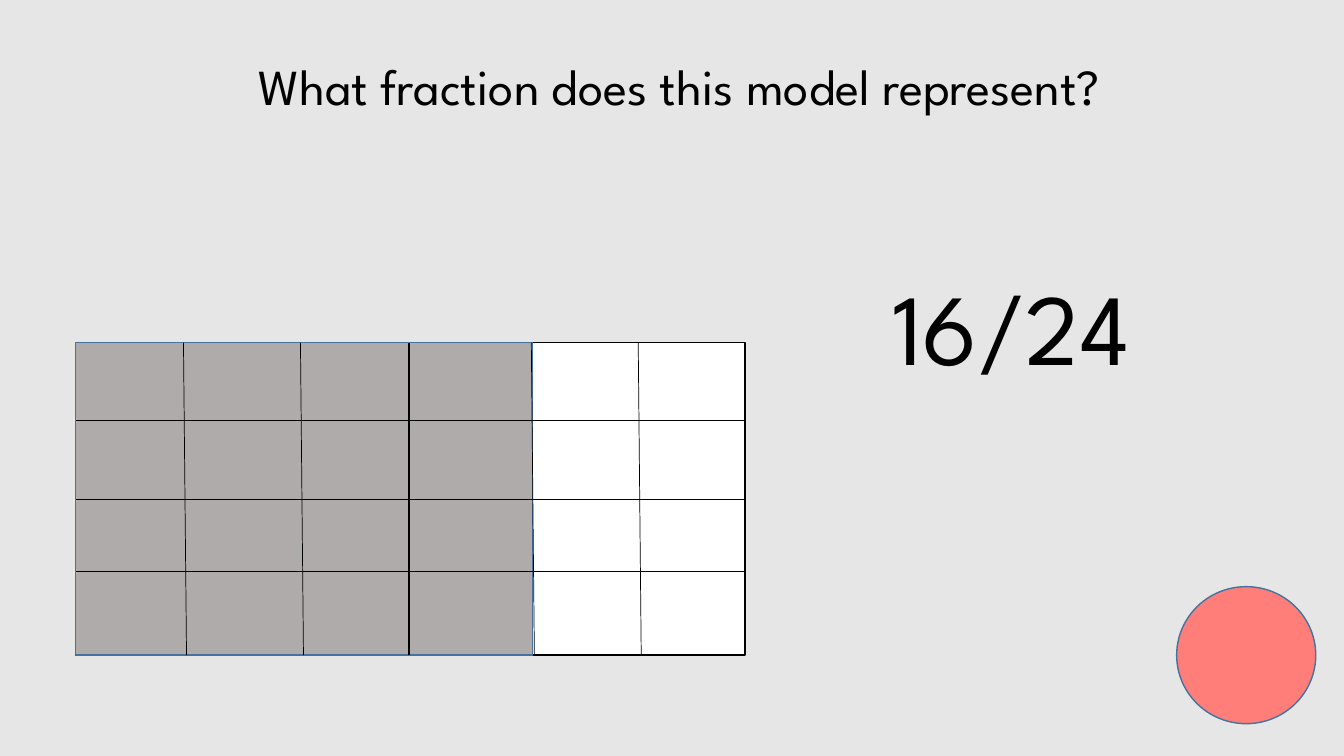
from lxml import etree
from pptx import Presentation
from pptx.dml.color import RGBColor
from pptx.enum.shapes import MSO_CONNECTOR, MSO_SHAPE
from pptx.enum.text import MSO_ANCHOR, MSO_AUTO_SIZE, PP_ALIGN
from pptx.oxml.ns import qn
from pptx.util import Inches, Pt

RECTANGLE, OVAL = MSO_SHAPE.RECTANGLE, MSO_SHAPE.OVAL
STRAIGHT = MSO_CONNECTOR.STRAIGHT
TOP = MSO_ANCHOR.TOP
NO_AUTOFIT = MSO_AUTO_SIZE.NONE
LEFT, CENTER = PP_ALIGN.LEFT, PP_ALIGN.CENTER

BLACK = RGBColor(0x00, 0x00, 0x00)
WHITE = RGBColor(0xFF, 0xFF, 0xFF)
PALE_GRAY = RGBColor(0xE7, 0xE6, 0xE6)
SHADED = RGBColor(0xAF, 0xAB, 0xAB)
CORAL = RGBColor(0xFF, 0x7E, 0x79)
BLUE = RGBColor(0x43, 0x73, 0x9E)


class FractionPage:
    font = "League Spartan"

    def __init__(self, deck):
        self.page = deck.slides.add_slide(deck.slide_layouts[5])
        self.page.background.fill.solid()
        self.page.background.fill.fore_color.rgb = PALE_GRAY

    def set_text(self, box, text, size, align):
        frame = box.text_frame
        frame.text = text
        frame.word_wrap = True
        frame.auto_size = NO_AUTOFIT
        frame.vertical_anchor = TOP
        para = frame.paragraphs[0]
        para.alignment = align
        para.line_spacing = 1.0
        para.space_before = Pt(0)
        span = para.runs[0]
        span.font.name = self.font
        span.font.size = Pt(size)
        span.font.color.rgb = BLACK

    def title(self, text, left, top, width, height, size):
        box = self.page.shapes.title
        box.left, box.top = Inches(left), Inches(top)
        box.width, box.height = Inches(width), Inches(height)
        self.set_text(box, text, size, CENTER)

    def label(self, text, left, top, width, height, size):
        box = self.page.shapes.add_textbox(
            Inches(left), Inches(top), Inches(width), Inches(height))
        self.set_text(box, text, size, LEFT)

    def shape(self, kind, left, top, width, height, fill, line):
        box = self.page.shapes.add_shape(
            kind, Inches(left), Inches(top), Inches(width), Inches(height))
        box.shadow.inherit = False
        box.fill.solid()
        box.fill.fore_color.rgb = fill
        box.line.color.rgb = line
        box.line.width = Pt(1)

    def line(self, x1, y1, x2, y2, weight=0.5):
        rule = self.page.shapes.add_connector(
            STRAIGHT, Inches(x1), Inches(y1), Inches(x2), Inches(y2))
        rule.line.color.rgb = BLACK
        rule.line.width = Pt(weight)
        etree.SubElement(rule._element.spPr, qn("a:effectLst"))


def main():
    deck = Presentation()
    deck.slide_width, deck.slide_height = Inches(13.33), Inches(7.5)
    page = FractionPage(deck)

    # Question and answer
    page.title("What fraction does this model represent? ", 0.55, 0.5, 12.5, 0.71, 36)
    page.label("16/24", 8.75, 2.58, 2.92, 1.31, 72)
    page.shape(OVAL, 11.67, 5.82, 1.38, 1.36, CORAL, BLUE)

    # Whole model with its shaded part
    left, top, width, height = 0.75, 3.4, 6.64, 3.1
    right, bottom = left + width, top + height
    page.shape(RECTANGLE, left, top, width, height, WHITE, BLACK)
    page.shape(RECTANGLE, left, top, 4.53, height, SHADED, BLUE)

    # Column dividers, most of them slightly slanted
    page.line(4.06, top, 4.06, bottom, 1.5)
    for x in (1.82, 2.98, 5.27, 6.33):
        page.line(x, top, x + 0.03, bottom)

    # Row dividers
    for y in (4.17, 4.95, 5.67):
        page.line(left, y, right, y)

    deck.save("out.pptx")


if __name__ == "__main__":
    main()
